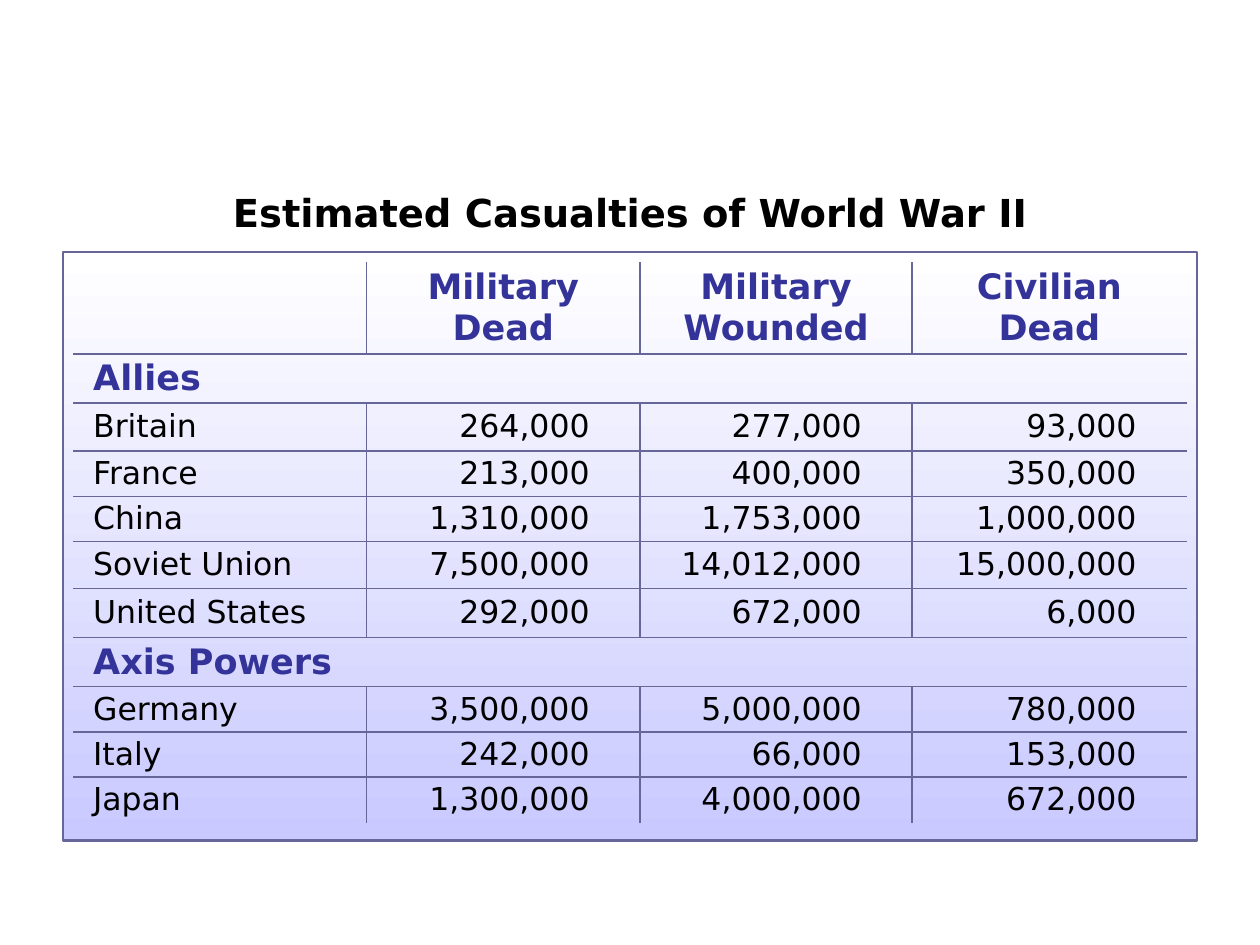
from lxml import etree
from pptx import Presentation
from pptx.dml.color import RGBColor
from pptx.enum import text
from pptx.oxml import ns
from pptx.enum import shapes
from pptx.util import Inches, Pt

FONT = "DejaVu Sans"
COLORS = {"text": "000000", "heading": "333399", "rule": "666699",
          "top": "FFFFFF", "bottom": "C9C9FF"}
COLUMN_WIDTHS = [2.33, 2.17, 2.16, 2.18]
ROW_HEIGHTS = [0.73, 0.39, 0.38, 0.36, 0.36, 0.37, 0.39, 0.39, 0.36, 0.36, 0.36]
ROWS = [
    ["", "Military Dead", "Military Wounded", "Civilian Dead"],
    ["Allies"],
    ["Britain", "264,000", "277,000", "93,000"],
    ["France", "213,000", "400,000", "350,000"],
    ["China", "1,310,000", "1,753,000", "1,000,000"],
    ["Soviet Union", "7,500,000", "14,012,000", "15,000,000"],
    ["United States", "292,000", "672,000", "6,000"],
    ["Axis Powers"],
    ["Germany", "3,500,000", "5,000,000", "780,000"],
    ["Italy", "242,000", "66,000", "153,000"],
    ["Japan", "1,300,000", "4,000,000", "672,000"],
]


def color(name):
    return RGBColor.from_string(COLORS[name])


def style_paragraph(para, size, color_name, bold, align):
    para.alignment = align
    para.font.name = FONT
    para.font.size = Pt(size)
    para.font.bold = bold
    para.font.color.rgb = color(color_name)


def add_title(page, words):
    box = page.shapes.title
    box.left, box.top, box.width, box.height = map(Inches, (0.5, 1.45, 9, 0.47))
    frame = box.text_frame
    frame.text = words
    frame.word_wrap = True
    frame.auto_size = text.MSO_AUTO_SIZE.NONE
    frame.vertical_anchor = text.MSO_ANCHOR.MIDDLE
    style_paragraph(frame.paragraphs[0], 22, "text", True, text.PP_ALIGN.CENTER)


def add_panel(page):
    panel = page.shapes.add_shape(shapes.MSO_SHAPE.RECTANGLE, Inches(0.5), Inches(2),
                                  Inches(9), Inches(4.67))
    panel.shadow.inherit = False
    panel.fill.gradient()
    panel.fill.gradient_angle = 270
    for stop, name in zip(panel.fill.gradient_stops, ("top", "bottom")):
        stop.color.rgb = color(name)
    panel.line.color.rgb = color("rule")
    panel.line.width = Pt(1.5)


def set_borders(cell, visible):
    properties = cell._tc.get_or_add_tcPr()
    for side in "LRTB":
        line = etree.SubElement(properties, ns.qn(f"a:ln{side}"), w=str(Pt(1)))
        if side in visible:
            fill = etree.SubElement(line, ns.qn("a:solidFill"))
            etree.SubElement(fill, ns.qn("a:srgbClr"), val=COLORS["rule"])
        else:
            etree.SubElement(line, ns.qn("a:noFill"))


def inner_sides(row, column, values):
    sides = {"T": row > 0, "B": row < len(ROWS) - 1}
    if len(values) > 1:
        sides.update(L=column > 0, R=column < len(COLUMN_WIDTHS) - 1)
    return {side for side, shown in sides.items() if shown}


def fill_cell(cell, words, heading, align, left, right):
    cell.vertical_anchor = text.MSO_ANCHOR.MIDDLE
    cell.margin_left, cell.margin_right = Inches(left), Inches(right)
    cell.margin_top = cell.margin_bottom = Inches(0.03)
    cell.text = words
    size, name = (20, "heading") if heading else (18, "text")
    style_paragraph(cell.text_frame.paragraphs[0], size, name, heading, align)


def add_casualty_table(page):
    frame = page.shapes.add_table(len(ROWS), len(COLUMN_WIDTHS), Inches(0.58), Inches(2.08),
                                  Inches(sum(COLUMN_WIDTHS)), Inches(sum(ROW_HEIGHTS)))
    table = frame.table
    table.first_row = table.horz_banding = False
    for column, width in zip(table.columns, COLUMN_WIDTHS):
        column.width = Inches(width)
    for row, height in zip(table.rows, ROW_HEIGHTS):
        row.height = Inches(height)
    for r, values in enumerate(ROWS):
        for c in range(len(COLUMN_WIDTHS)):
            cell = table.cell(r, c)
            set_borders(cell, inner_sides(r, c, values))
            cell.fill.background()
        section = len(values) == 1
        if section:
            table.cell(r, 0).merge(table.cell(r, len(COLUMN_WIDTHS) - 1))
        for c, words in enumerate(values):
            if r == 0:
                layout = text.PP_ALIGN.CENTER, 0.1, 0.1
            elif c == 0:
                layout = text.PP_ALIGN.LEFT, 0.16, 0.1
            else:
                layout = text.PP_ALIGN.RIGHT, 0.1, 0.4
            fill_cell(table.cell(r, c), words, r == 0 or section, *layout)


def main():
    deck = Presentation()
    deck.slide_width, deck.slide_height = Inches(10), Inches(7.5)
    page = deck.slides.add_slide(deck.slide_layouts.get_by_name("Title Only"))
    add_panel(page)
    add_title(page, "Estimated Casualties of World War II")
    add_casualty_table(page)
    deck.save("out.pptx")


if __name__ == "__main__":
    main()
